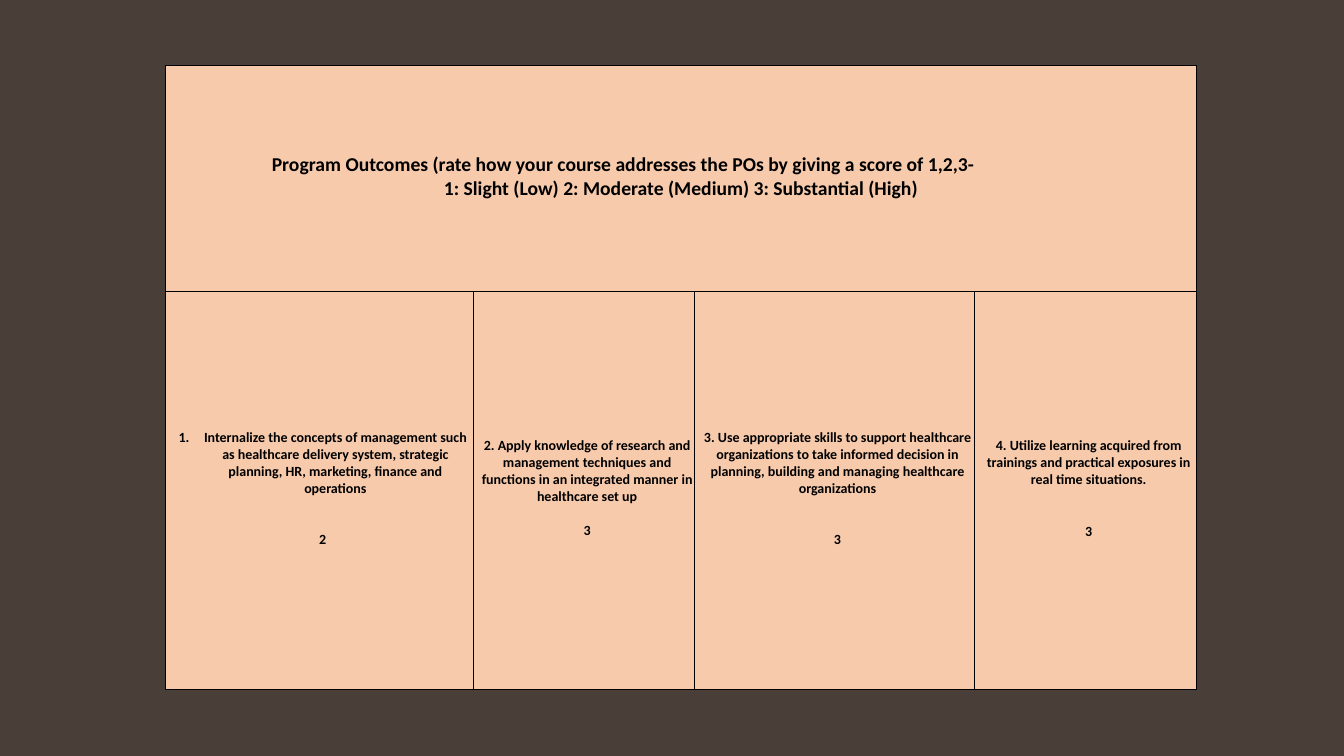
import pptx
import pptx.util
import pptx.dml.color
import pptx.enum.text
import pptx.oxml
import pptx.oxml.ns

Cm, Pt = pptx.util.Cm, pptx.util.Pt
RGBColor = pptx.dml.color.RGBColor
PP_ALIGN = pptx.enum.text.PP_ALIGN
NS = pptx.oxml.ns.nsdecls("a")

# Content
HEADING = [
    "Program Outcomes (rate how your course addresses the POs by giving a score of 1,2,3-",
    "1: Slight (Low) 2: Moderate (Medium) 3: Substantial (High)",
]
# (outcome, score, lines of gap above the score)
OUTCOMES = [
    ("Internalize the concepts of management such as healthcare delivery system, "
     "strategic planning, HR, marketing, finance and operations", "2", 2),
    ("2. Apply knowledge of research and management techniques and functions "
     "in an integrated manner in healthcare set up", "3", 1),
    ("3. Use appropriate skills to support healthcare organizations to take informed "
     "decision in planning, building and managing healthcare organizations", "3", 2),
    ("4. Utilize learning acquired from trainings and practical exposures "
     "in real time situations.", "3", 2),
]
COL_WIDTHS = [7.77, 5.56, 7.06, 5.6]
ROW_HEIGHTS = [5.7, 10.03]
LINE_HEIGHT = 12.2

BACKGROUND = RGBColor(0x4A, 0x3F, 0x38)
PEACH = RGBColor(0xF7, 0xCA, 0xAC)
BLACK = RGBColor(0x00, 0x00, 0x00)


def style_cell(cell, left_margin):
    cell.fill.solid()
    cell.fill.fore_color.rgb = PEACH
    cell.vertical_anchor = pptx.enum.text.MSO_ANCHOR.MIDDLE
    cell.margin_left = Cm(left_margin)
    cell.margin_right = cell.margin_top = Cm(0.03)
    cell.margin_bottom = Cm(0.13)
    # Borders come before the fill in the cell properties
    tc_pr = cell._tc.get_or_add_tcPr()
    for i, side in enumerate("LRTB"):
        tc_pr.insert(i, pptx.oxml.parse_xml(
            f'<a:ln{side} {NS} w="{Pt(0.5)}"><a:solidFill>'
            f'<a:srgbClr val="{BLACK}"/></a:solidFill></a:ln{side}>'))


def write_cell(cell, lines, size):
    tf = cell.text_frame
    tf.text = "\n".join(lines)
    for p in tf.paragraphs:
        p.alignment = PP_ALIGN.CENTER
        for r in p.runs:
            r.font.name = "Calibri"
            r.font.size = Pt(size)
            r.font.bold = True
            r.font.color.rgb = BLACK
    return tf.paragraphs


prs = pptx.Presentation()
prs.slide_width, prs.slide_height = Cm(33.87), Cm(19.05)
s = prs.slides.add_slide(prs.slide_layouts[6])
s.background.fill.solid()
s.background.fill.fore_color.rgb = BACKGROUND

# Table grid
table = s.shapes.add_table(2, len(OUTCOMES), Cm(4.17), Cm(1.65),
                           Cm(sum(COL_WIDTHS)), Cm(sum(ROW_HEIGHTS))).table
table.first_row = table.horz_banding = False
for col, width in zip(table.columns, COL_WIDTHS):
    col.width = Cm(width)
for row, height, left_margin in zip(table.rows, ROW_HEIGHTS, (0.03, 0.18)):
    row.height = Cm(height)
    for cell in row.cells:
        style_cell(cell, left_margin)

# Heading across all columns, its first line set off to the left
heading = table.cell(0, 0)
heading.merge(table.cell(0, len(OUTCOMES) - 1))
first = write_cell(heading, HEADING, 14)[0]
first.alignment = PP_ALIGN.LEFT
first._p.get_or_add_pPr().set("marL", str(Cm(2.65)))

# Outcomes with their scores
for col, (outcome, score, gap) in enumerate(OUTCOMES):
    text_p, score_p = write_cell(table.cell(1, col), [outcome, score], 10)
    score_p.space_before = Pt(gap * LINE_HEIGHT)
    if col == 0:
        p_pr = text_p._p.get_or_add_pPr()
        p_pr.set("marL", str(Cm(0.64)))
        p_pr.set("indent", str(-Cm(0.64)))
        p_pr.append(pptx.oxml.parse_xml(f'<a:buAutoNum {NS} type="arabicPeriod"/>'))

prs.save("out.pptx")
